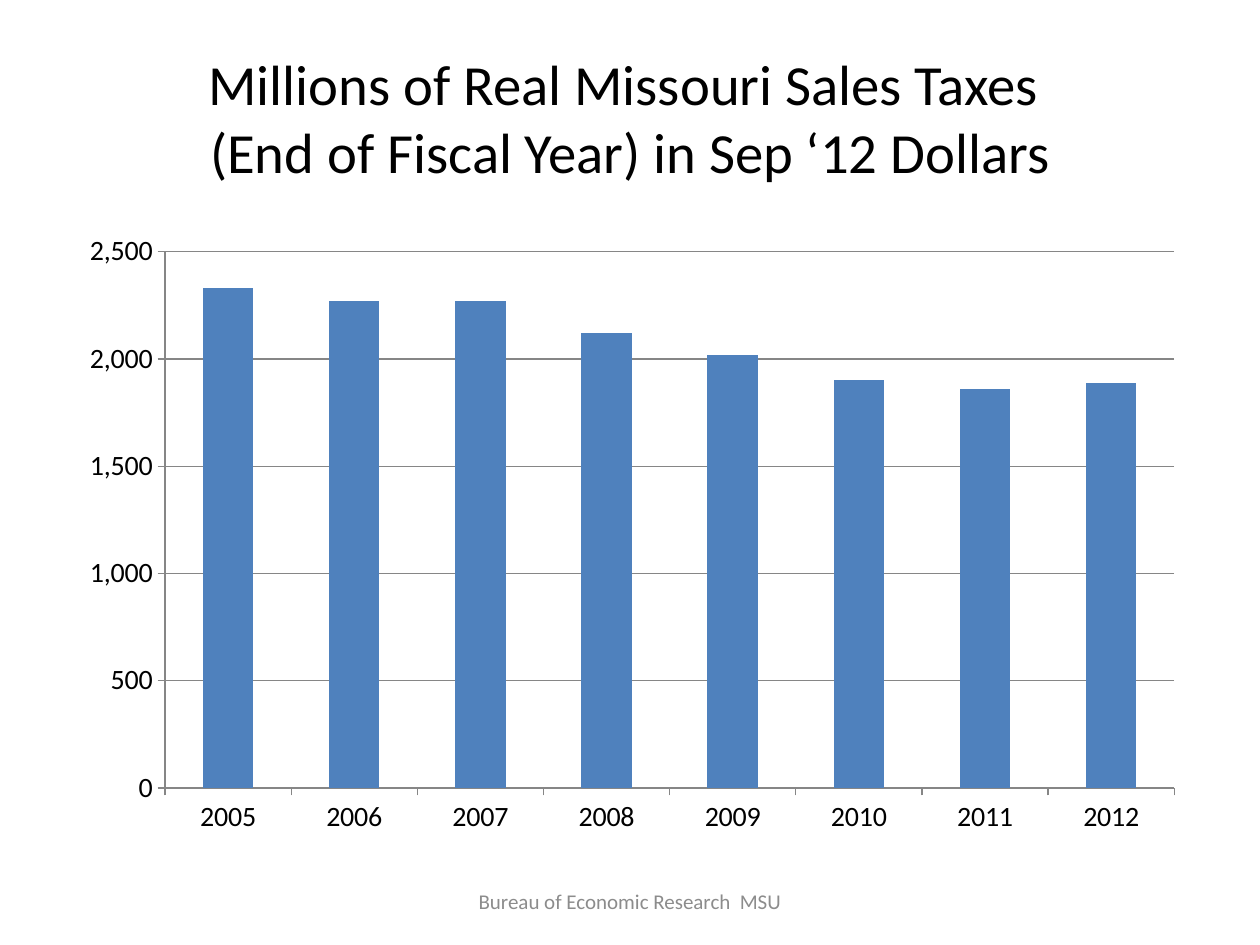
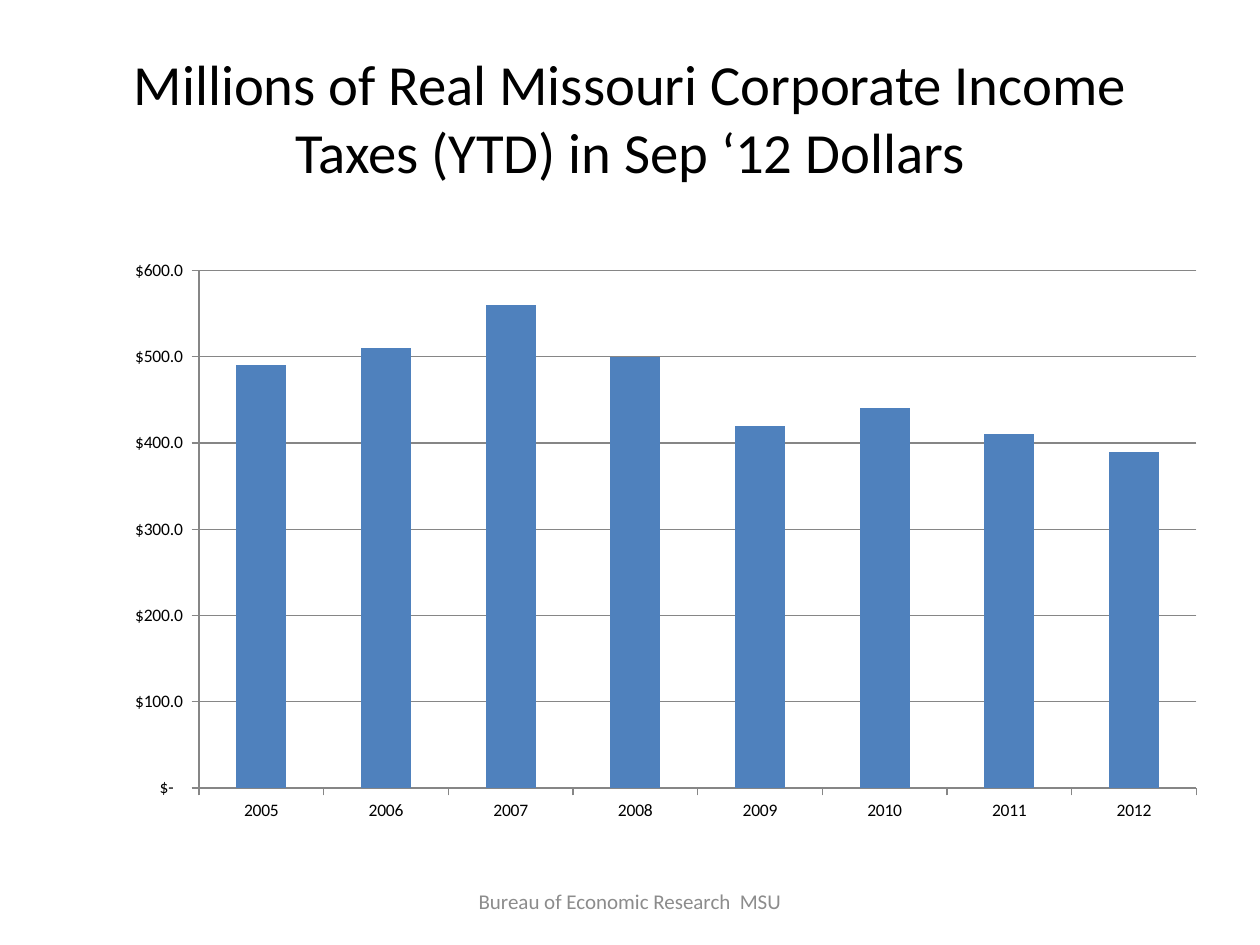
from dataclasses import dataclass

from lxml.etree import SubElement
from pptx import Presentation
from pptx.chart.data import CategoryChartData
from pptx.dml.color import RGBColor
from pptx.enum.chart import XL_CHART_TYPE, XL_TICK_MARK
from pptx.enum.text import MSO_ANCHOR, PP_ALIGN
from pptx.oxml.ns import qn
from pptx.util import Inches, Pt

SLIDE_WIDTH, SLIDE_HEIGHT = Inches(10), Inches(7.5)
FONT = "Calibri"
COLORS = {"text": "000000", "footer": "8C8C8C", "bar": "4F81BD", "axis": "868686"}

TITLE_AREA = (0.05, 0.04, 0.9, 1 / 6)
CHART_AREA = (0.05, 7 / 30, 0.9, 0.66)
FOOTER_AREA = (0.3417, 0.9267, 0.3167, 0.0533)

FOOTER = "Bureau of Economic Research  MSU"
YEARS = [str(year) for year in range(2005, 2013)]
DOLLAR_FORMAT = r'_("$"* #,##0.0_);_("$"* \(#,##0.0\);_("$"* "-"?_);_(@_)'


@dataclass
class TaxSlide:
    title_lines: list
    millions: list
    number_format: str
    maximum: int
    step: int
    label_size: int
    plot_area: tuple


TAX_SLIDES = [
    TaxSlide(
        ["Millions of Real Missouri Sales Taxes ",
         "(End of Fiscal Year) in Sep ‘12 Dollars"],
        [2330, 2270, 2270, 2120, 2020, 1900, 1860, 1890],
        "#,##0", 2500, 500, 16, (0.09, 0.05, 0.89, 0.86),
    ),
    TaxSlide(
        ["Millions of Real Missouri Corporate Income Taxes (YTD) in Sep ‘12 Dollars"],
        [490, 510, 560, 500, 420, 440, 410, 390],
        DOLLAR_FORMAT, 600, 100, 10, (0.12, 0.08, 0.88, 0.83),
    ),
]


def color(name):
    return RGBColor.from_string(COLORS[name])


def place(area):
    left, top, width, height = area
    return (round(left * SLIDE_WIDTH), round(top * SLIDE_HEIGHT),
            round(width * SLIDE_WIDTH), round(height * SLIDE_HEIGHT))


def style_font(font, size, color_name):
    font.name = FONT
    font.size = Pt(size)
    font.color.rgb = color(color_name)


def add_centred_text(slide, area, lines, size, color_name):
    frame = slide.shapes.add_textbox(*place(area)).text_frame
    frame.word_wrap = True
    frame.vertical_anchor = MSO_ANCHOR.MIDDLE
    paragraph = frame.paragraphs[0]
    paragraph.alignment = PP_ALIGN.CENTER
    for index, line in enumerate(lines):
        if index:
            paragraph.add_line_break()
        run = paragraph.add_run()
        run.text = line
        style_font(run.font, size, color_name)


def style_line(line):
    line.color.rgb = color("axis")
    line.width = Pt(0.75)


def set_plot_area(chart, plot_area):
    area_element = chart.plots[0]._element.getparent()
    layout = area_element.find(qn("c:layout"))
    if layout is None:
        layout = SubElement(area_element, qn("c:layout"))
        area_element.insert(0, layout)
    manual = SubElement(layout, qn("c:manualLayout"))
    settings = [("layoutTarget", "inner"), ("xMode", "edge"), ("yMode", "edge")]
    settings += zip("xywh", map(str, plot_area))
    for tag, value in settings:
        SubElement(manual, qn(f"c:{tag}")).set("val", value)


def add_tax_chart(slide, content):
    data = CategoryChartData()
    data.categories = YEARS
    data.add_series("Series 1", content.millions)
    chart = slide.shapes.add_chart(
        XL_CHART_TYPE.COLUMN_CLUSTERED, *place(CHART_AREA), data).chart
    chart.has_legend = False
    chart.has_title = False
    style_font(chart.font, content.label_size, "text")

    plot = chart.plots[0]
    plot.gap_width = 150
    plot.vary_by_categories = False
    fill = plot.series[0].format.fill
    fill.solid()
    fill.fore_color.rgb = color("bar")

    for axis in (chart.category_axis, chart.value_axis):
        axis.major_tick_mark = XL_TICK_MARK.OUTSIDE
        axis.minor_tick_mark = XL_TICK_MARK.NONE
        style_line(axis.format.line)

    value_axis = chart.value_axis
    value_axis.minimum_scale = 0
    value_axis.maximum_scale = content.maximum
    value_axis.major_unit = content.step
    value_axis.has_major_gridlines = True
    style_line(value_axis.major_gridlines.format.line)
    value_axis.tick_labels.number_format = content.number_format
    value_axis.tick_labels.number_format_is_linked = False
    set_plot_area(chart, content.plot_area)


def main():
    presentation = Presentation()
    presentation.slide_width = SLIDE_WIDTH
    presentation.slide_height = SLIDE_HEIGHT
    for content in TAX_SLIDES:
        slide = presentation.slides.add_slide(presentation.slide_layouts[6])
        add_centred_text(slide, TITLE_AREA, content.title_lines, 32.4, "text")
        add_tax_chart(slide, content)
        add_centred_text(slide, FOOTER_AREA, [FOOTER], 12, "footer")
    presentation.save("out.pptx")


if __name__ == "__main__":
    main()
